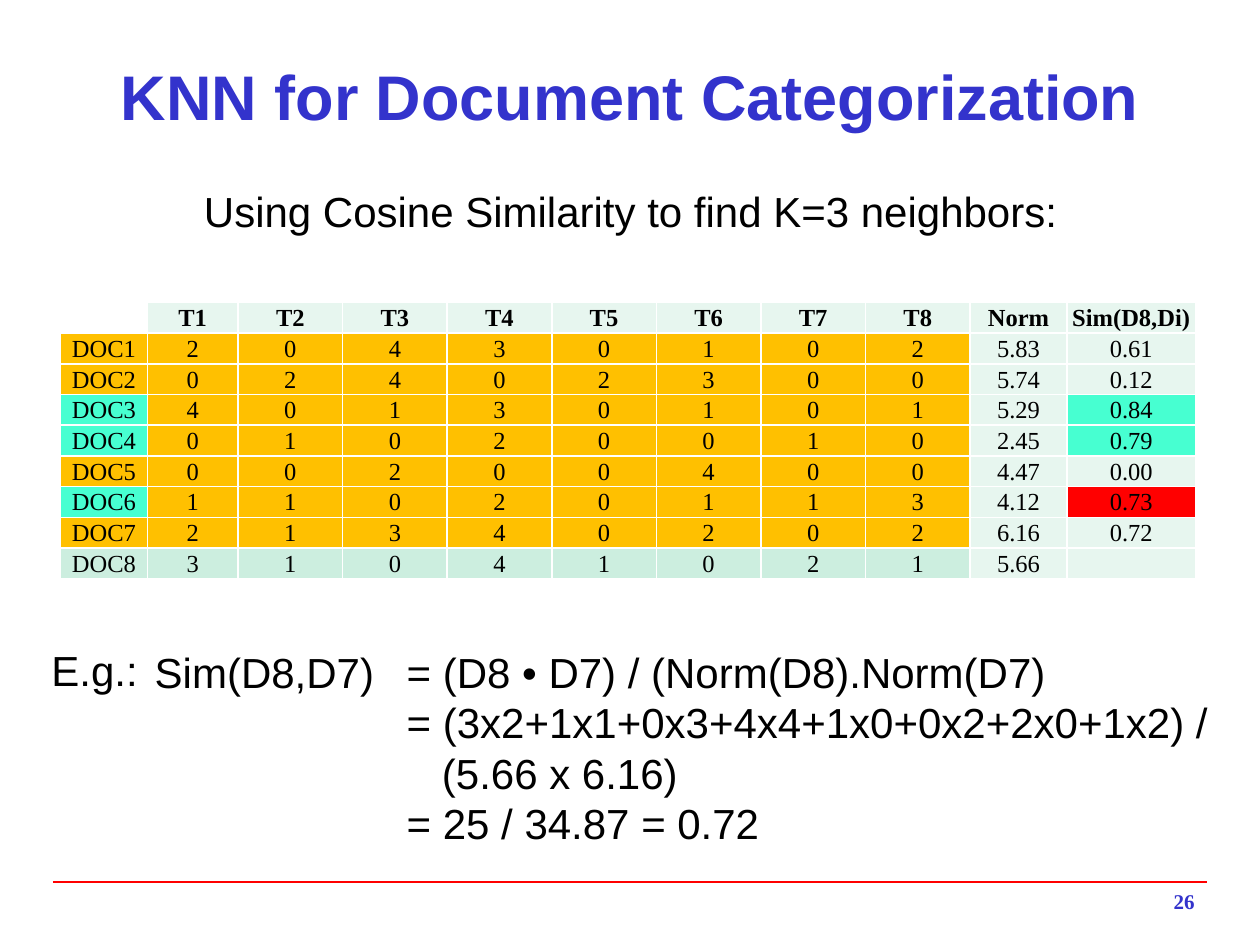
"""Build a slide on KNN document categorization with cosine similarity."""
from dataclasses import dataclass

from lxml.etree import SubElement
from pptx import Presentation
from pptx.dml.color import RGBColor
from pptx.enum.shapes import MSO_CONNECTOR
from pptx.enum.text import MSO_ANCHOR, PP_ALIGN
from pptx.oxml.ns import qn
from pptx.slide import Slide
from pptx.table import _Cell as Cell
from pptx.text.text import TextFrame
from pptx.util import Inches, Pt

BLACK = RGBColor(0x00, 0x00, 0x00)
WHITE = RGBColor(0xFF, 0xFF, 0xFF)
BLUE = RGBColor(0x33, 0x33, 0xCC)
RED = RGBColor(0xFF, 0x00, 0x00)
AMBER = RGBColor(0xFF, 0xC0, 0x00)
TEAL = RGBColor(0x47, 0xFF, 0xD1)
MINT = RGBColor(0xCC, 0xEE, 0xDF)
PALE = RGBColor(0xE7, 0xF6, 0xEF)
SANS, SERIF = "Arial", "Times New Roman"


@dataclass(frozen=True)
class Document:
    name: str
    counts: str
    norm: str
    similarity: str
    name_fill: RGBColor = AMBER
    count_fill: RGBColor = AMBER
    similarity_fill: RGBColor = PALE

    def cells(self) -> list[tuple[str, RGBColor]]:
        return [
            (self.name, self.name_fill),
            *((count, self.count_fill) for count in self.counts),
            (self.norm, PALE),
            (self.similarity, self.similarity_fill),
        ]


@dataclass(frozen=True)
class Label:
    text: str
    left: float
    top: float
    width: float
    height: float


HEADER = [("", WHITE)] + [
    (text, PALE) for text in [*(f"T{n}" for n in range(1, 9)), "Norm", "Sim(D8,Di)"]
]
DOCUMENTS = [
    Document("DOC1", "20430102", "5.83", "0.61"),
    Document("DOC2", "02402300", "5.74", "0.12"),
    Document("DOC3", "40130101", "5.29", "0.84", TEAL, similarity_fill=TEAL),
    Document("DOC4", "01020010", "2.45", "0.79", TEAL, similarity_fill=TEAL),
    Document("DOC5", "00200400", "4.47", "0.00"),
    Document("DOC6", "11020113", "4.12", "0.73", TEAL, similarity_fill=RED),
    Document("DOC7", "21340202", "6.16", "0.72"),
    Document("DOC8", "31041021", "5.66", "", MINT, MINT),
]
COLUMN_WIDTHS = [0.69, 0.72, *[0.83] * 7, 0.77, 1.02]
ROW_HEIGHT = 0.21

TITLE = Label("KNN for Document Categorization", 0.5, 0.42, 9, 0.67)
PAGE_NUMBER = Label("26", 7.5, 7, 2.08, 0.33)
SUBTITLE = Label("Using Cosine Similarity to find K=3 neighbors:", 1.52, 1.42, 7.05, 0.5)
EXAMPLE = Label("E.g.:", 0.31, 5.07, 0.95, 0.5)
WORKING = Label(
    "Sim(D8,D7) \t= (D8 • D7) / (Norm(D8).Norm(D7)\n"
    "= (3x2+1x1+0x3+4x4+1x0+0x2+2x0+1x2) /\n"
    "(5.66 x 6.16)\n"
    "= 25 / 34.87 = 0.72",
    1.13, 5.08, 8.64, 1.72,
)
WORKING_INDENTS = [(2, -2), (2, 0), (2.28, 0), (2, 0)]


def write_text(frame: TextFrame, text: str, *, size: float = 24, font: str = SANS,
               color: RGBColor = BLACK, bold: bool = False,
               align: PP_ALIGN = PP_ALIGN.LEFT) -> None:
    for index, line in enumerate(text.split("\n")):
        para = frame.add_paragraph() if index else frame.paragraphs[0]
        para.alignment = align
        if not line:
            para._p.get_or_add_endParaRPr().set("sz", str(size * 100))
            continue
        span = para.add_run()
        span.text = line
        span.font.size = Pt(size)
        span.font.name = font
        span.font.bold = bold
        span.font.color.rgb = color


def add_label(page: Slide, label: Label, anchor: MSO_ANCHOR = MSO_ANCHOR.TOP,
              **text_format) -> TextFrame:
    box = page.shapes.add_textbox(
        *(Inches(n) for n in (label.left, label.top, label.width, label.height)))
    frame = box.text_frame
    frame.word_wrap = True
    frame.vertical_anchor = anchor
    write_text(frame, label.text, **text_format)
    return frame


def add_footer_rule(page: Slide) -> None:
    rule = page.shapes.add_connector(
        MSO_CONNECTOR.STRAIGHT, Inches(0.42), Inches(7), Inches(9.58), Inches(7))
    rule.line.color.rgb = RED
    rule.line.width = Pt(1)
    SubElement(rule._element.spPr, qn("a:effectLst"))


def format_cell(cell: Cell, text: str, fill: RGBColor, bold: bool) -> None:
    cell.margin_left = cell.margin_right = cell.margin_top = Inches(0.01)
    cell.margin_bottom = 0
    cell.vertical_anchor = MSO_ANCHOR.MIDDLE
    properties = cell._tc.get_or_add_tcPr()
    for side in ("lnL", "lnR", "lnT", "lnB"):
        border = SubElement(properties, qn(f"a:{side}"), w=str(Pt(1)))
        SubElement(SubElement(border, qn("a:solidFill")), qn("a:srgbClr"), val=str(WHITE))
    cell.fill.solid()
    cell.fill.fore_color.rgb = fill
    write_text(cell.text_frame, text, size=14, font=SERIF, bold=bold, align=PP_ALIGN.CENTER)


def add_term_table(page: Slide) -> None:
    rows = [HEADER, *(document.cells() for document in DOCUMENTS)]
    table = page.shapes.add_table(
        len(rows), len(COLUMN_WIDTHS), Inches(0.48), Inches(2.4),
        Inches(sum(COLUMN_WIDTHS)), Inches(ROW_HEIGHT * len(rows))).table
    table.first_row = table.horz_banding = False
    for column, width in zip(table.columns, COLUMN_WIDTHS):
        column.width = Inches(width)
    for row_index, row in enumerate(rows):
        table.rows[row_index].height = Inches(ROW_HEIGHT)
        for column_index, (text, fill) in enumerate(row):
            format_cell(table.cell(row_index, column_index), text, fill, row_index == 0)


def add_working(page: Slide) -> None:
    frame = add_label(page, WORKING)
    for para, (margin, indent) in zip(frame.paragraphs, WORKING_INDENTS):
        properties = para._p.get_or_add_pPr()
        properties.set("marL", str(Inches(margin)))
        properties.set("indent", str(Inches(indent)))


def main() -> None:
    deck = Presentation()
    deck.slide_width, deck.slide_height = Inches(10), Inches(7.5)
    page = deck.slides.add_slide(deck.slide_layouts[6])
    add_footer_rule(page)
    add_label(page, TITLE, MSO_ANCHOR.MIDDLE, size=36, color=BLUE, bold=True,
              align=PP_ALIGN.CENTER)
    add_label(page, PAGE_NUMBER, size=12, font=SERIF, color=BLUE, bold=True,
              align=PP_ALIGN.RIGHT)
    add_term_table(page)
    add_label(page, SUBTITLE)
    add_label(page, EXAMPLE)
    add_working(page)
    deck.save("out.pptx")


if __name__ == "__main__":
    main()
